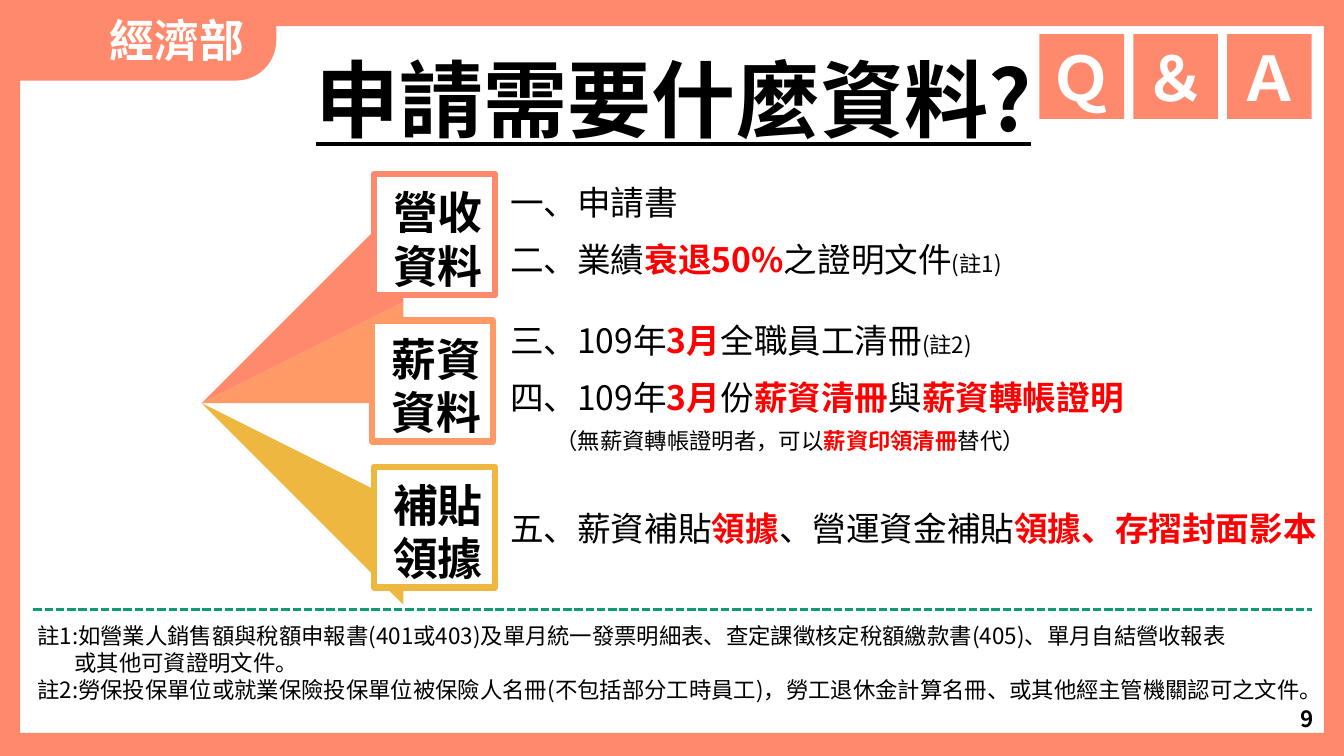
from lxml import etree
from pptx import Presentation, util as u
from pptx.dml.color import RGBColor
from pptx.enum import dml, shapes, text
from pptx.oxml import ns

# Content
MINISTRY = "經濟部"
TITLE = "申請需要什麼資料?"
BADGES = ["Ｑ", "＆", "Ａ"]
PAGE = "9"
COLORS = {"coral": "FF896D", "orange": "FF9966", "gold": "EDB740", "green": "0C9B74",
          "red": "FF0000", "black": "000000", "white": "FFFFFF"}
RED = {"color": "red", "bold": True}
SMALL = {"size": 16}
SMALL_RED = {**RED, **SMALL}

# A paragraph is (runs, layout); a run is (words, format)
GROUPS = [
    {"label": ["營收", "資料"], "color": "coral", "left": 3.71,
     "fan": [(3.64, 1.72), (3.65, 2.95)], "box": (4.96, 1.75, 7.57, 1.08),
     "items": [
         ([("一、申請書", {})], {"after": 6}),
         ([("二、業績", {}), ("衰退50%", RED), ("之證明文件", {}), ("(註1)", SMALL)],
          {"before": 6, "after": 6})]},
    {"label": ["薪資", "資料"], "color": "orange", "left": 3.69,
     "fan": [(3.64, 3.16), (3.64, 4.4)], "box": (4.96, 3.12, 7.84, 1.48),
     "items": [
         ([("三、109年", {}), ("3月", RED), ("全職員工清冊", {}), ("(註2)", SMALL)],
          {"after": 6}),
         ([("四、109年", {}), ("3月", RED), ("份", {}), ("薪資清冊", RED), ("與", {}),
           ("薪資轉帳證明", RED)], {"before": 6}),
         ([("（無薪資轉帳證明者，可以", SMALL), ("薪資印領清冊", SMALL_RED), ("替代）", SMALL)],
          {"before": 7, "indent": 0.45})]},
    {"label": ["補貼", "領據"], "color": "gold", "left": 3.71,
     "fan": [(3.63, 5.83), (3.64, 4.59)], "box": (4.96, 4.99, 8.37, 0.5),
     "items": [
         ([("五、薪資補貼", {}), ("領據", RED), ("、營運資金補貼", {}),
           ("領據、存摺封面影本", RED)], {})]},
]
NOTES = [
    ([("註1:如營業人銷售額與稅額申報書(401或403)及單月統一發票明細表、"
       "查定課徵核定稅額繳款書(405)、單月自結營收報表", {})], {}),
    ([("或其他可資證明文件。", {})], {"indent": 0.37}),
    ([("註2:勞保投保單位或就業保險投保單位被保險人名冊(不包括部分工時員工)，"
       "勞工退休金計算名冊、或其他經主管機關認可之文件。", {})], {}),
]

# Layout, in inches
FONT = "Noto Sans CJK SC"
WIDTH, HEIGHT = 13.33, 7.5
FRAME = [(0.36, 0, 12.97, 0.26), (0, 0, 0.2, HEIGHT),
         (13.13, 0.26, 0.2, 7.24), (0.16, 7.27, 12.98, 0.23)]
FAN_TIP = (1.8, 4.5)
LABEL_TOP, LABEL_STEP, LABEL_SIDE = 1.73, 1.45, 1.2
BADGE_LEFT, BADGE_TOP, BADGE_STEP, BADGE_SIDE = 10.31, 0.34, 0.93, 0.84

prs = Presentation()
prs.slide_width, prs.slide_height = u.Inches(WIDTH), u.Inches(HEIGHT)
slide = prs.slides.add_slide(prs.slide_layouts.get_by_name("Comparison"))


def rgb(name):
    return RGBColor.from_string(COLORS[name])


def write(frame, paragraphs, size=24, color="black", bold=False, underline=False,
          align="LEFT", anchor="TOP", spacing=1.0):
    """Fill a text frame; strings are plain paragraphs, tuples hold runs and layout."""
    frame.word_wrap = True
    frame.auto_size = text.MSO_AUTO_SIZE.NONE
    frame.vertical_anchor = getattr(text.MSO_ANCHOR, anchor)
    for i, content in enumerate(paragraphs):
        runs, layout = ([(content, {})], {}) if isinstance(content, str) else content
        para = frame.paragraphs[0] if i == 0 else frame.add_paragraph()
        props = para._p.get_or_add_pPr()
        props.set("marL", str(u.Inches(layout.get("indent", 0))))
        props.set("indent", "0")
        etree.SubElement(props, ns.qn("a:buNone"))
        para.alignment = getattr(text.PP_ALIGN, align)
        para.line_spacing = spacing
        para.space_before = u.Pt(layout.get("before", 0))
        para.space_after = u.Pt(layout.get("after", 0))
        for words, style in runs:
            run = para.add_run()
            run.text = words
            font = run.font
            font.name = FONT
            font.size = u.Pt(style.get("size", size))
            font.bold = style.get("bold", bold)
            font.underline = underline
            font.color.rgb = rgb(style.get("color", color))
            latin = run._r.rPr.find(ns.qn("a:latin"))
            east_asian = etree.Element(ns.qn("a:ea"), typeface=FONT)
            latin.addnext(east_asian)


def place(item, box):
    item.left, item.top, item.width, item.height = map(u.Inches, box)
    return item.text_frame


def paint(item, fill, outline=None):
    item.shadow.inherit = False
    item.fill.solid()
    item.fill.fore_color.rgb = rgb(fill)
    if outline:
        item.line.color.rgb = rgb(outline)
        item.line.width = u.Pt(4.5)
    else:
        item.line.fill.background()
    return item


def add_block(box, fill, outline=None, kind="RECTANGLE"):
    preset = getattr(shapes.MSO_SHAPE, kind)
    return paint(slide.shapes.add_shape(preset, *map(u.Inches, box)), fill, outline)


def add_words(box, words, **style):
    write(slide.shapes.add_textbox(*map(u.Inches, box)).text_frame, words, **style)


# Frame and ministry tab
for edge in FRAME:
    add_block(edge, "coral")
tab = add_block((0.05, 0, 2.69, 0.8), "coral", kind="ROUND_1_RECTANGLE")
tab.adjustments[0] = 0.5
tab._element.spPr.find(ns.qn("a:xfrm")).set("flipV", "1")
add_words((0.99, 0.08, 2.18, 0.64), [MINISTRY], size=32, color="white", bold=True)

# Title and badges
write(place(slide.shapes.title, (0.54, 0.32, 12.28, 1.21)), [TITLE], size=60, bold=True,
      underline=True, align="CENTER", anchor="BOTTOM", spacing=0.9)
for i, letter in enumerate(BADGES):
    badge = add_block((BADGE_LEFT + i * BADGE_STEP, BADGE_TOP, BADGE_SIDE, BADGE_SIDE), "coral")
    write(badge.text_frame, [letter], size=44, color="white", bold=True,
          align="CENTER", anchor="MIDDLE")

# Fans, labels and lists
*lists, notes = [p for p in slide.placeholders if p.placeholder_format.idx > 0]
for i, (group, listing) in enumerate(zip(GROUPS, lists)):
    fan = slide.shapes.build_freeform(*FAN_TIP, scale=u.Inches(1))
    fan.add_line_segments(group["fan"], close=True)
    paint(fan.convert_to_shape(), group["color"])
    label = add_block((group["left"], LABEL_TOP + i * LABEL_STEP, LABEL_SIDE, LABEL_SIDE),
                      "white", group["color"]).text_frame
    label.margin_left, label.margin_top = u.Inches(0.07), u.Inches(0.08)
    label.margin_right = label.margin_bottom = 0
    write(label, group["label"], size=32, bold=True, align="CENTER", anchor="MIDDLE")
    write(place(listing, group["box"]), group["items"], align="JUSTIFY")

# Divider, notes and page number
divider = slide.shapes.add_connector(shapes.MSO_CONNECTOR.STRAIGHT,
                                     *map(u.Inches, (0.33, 6.05, 13.01, 6.05)))
divider.line.color.rgb = rgb("green")
divider.line.width = u.Pt(2)
divider.line.dash_style = dml.MSO_LINE.SQUARE_DOT
etree.SubElement(divider._element.spPr, ns.qn("a:effectLst"))
write(place(notes, (0.27, 6.12, 12.86, 0.91)), NOTES, size=16)
add_words((10.13, 6.93, 3, 0.4), [PAGE], size=16, bold=True, align="RIGHT", anchor="MIDDLE")

prs.save("out.pptx")
